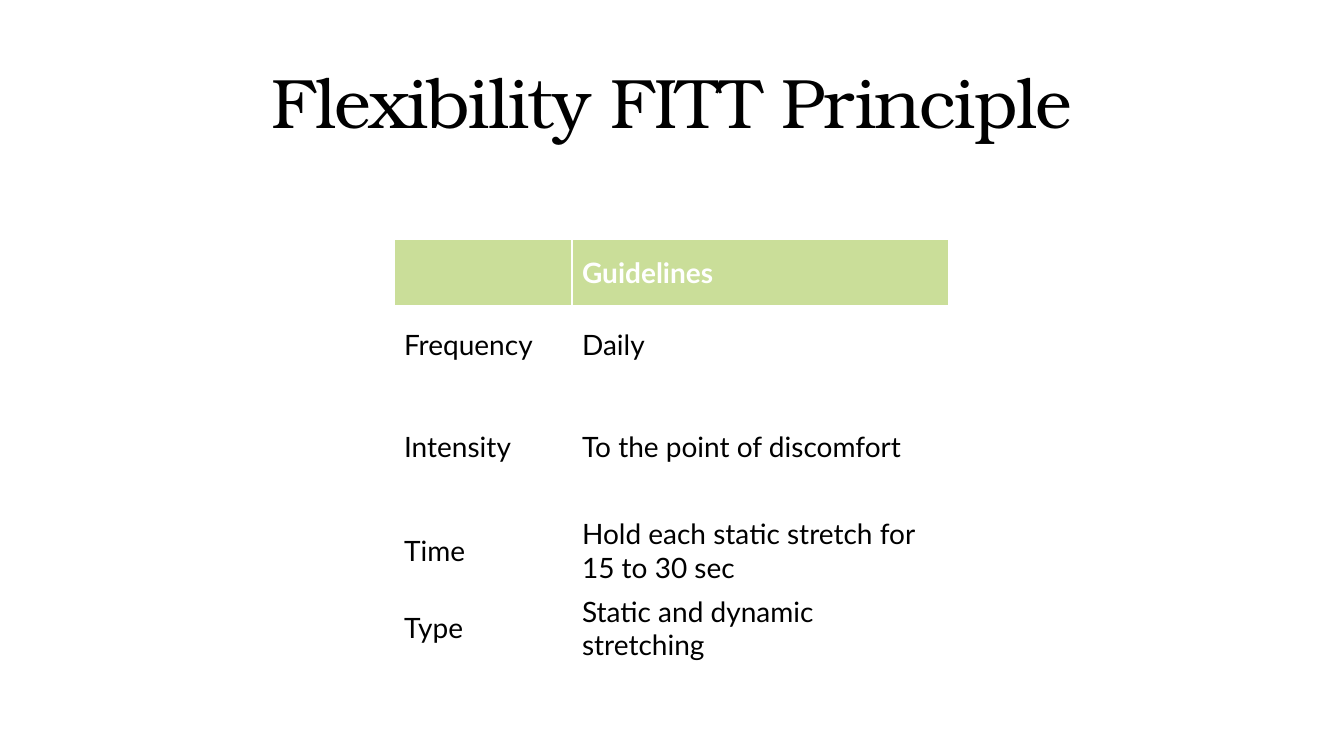
from lxml import etree
from pptx import Presentation
from pptx.dml.color import RGBColor
from pptx.enum.text import MSO_ANCHOR, PP_ALIGN
from pptx.oxml.ns import qn
from pptx.util import Pt

EMU_PER_PX = 914400 / 100.8
MIDDLE = MSO_ANCHOR.MIDDLE
CENTER = PP_ALIGN.CENTER

BLACK = RGBColor(0x00, 0x00, 0x00)
WHITE = RGBColor(0xFF, 0xFF, 0xFF)
LIGHT_GREEN = RGBColor(0xCA, 0xDE, 0x99)

TITLE_FONT = "TeX Gyre Bonum"
BODY_FONT = "Lato"

GUIDELINES = [
    ("", "Guidelines"),
    ("Frequency", "Daily"),
    ("Intensity", "To the point of discomfort"),
    ("Time", "Hold each static stretch for 15 to 30 sec"),
    ("Type", "Static and dynamic stretching"),
]
COLUMN_WIDTHS = [178, 377]
ROW_HEIGHTS = [68, 75, 130, 75, 75]


def px(length):
    return round(length * EMU_PER_PX)


def write(frame, text, font=BODY_FONT, size=20, color=BLACK, bold=False,
          align=None, line_spacing=None, tracking=None):
    """Fill a text frame with one formatted paragraph; tracking is in points."""
    paragraph = frame.paragraphs[0]
    paragraph.alignment = align
    paragraph.line_spacing = line_spacing
    paragraph.font.size = Pt(size)
    if not text:
        return
    run = paragraph.add_run()
    run.text = text
    run.font.name = font
    run.font.size = Pt(size)
    run.font.bold = bold
    run.font.color.rgb = color
    if tracking is not None:
        run.font._element.set("spc", str(round(tracking * 100)))


def set_borders(cell, color, **widths):
    """Give cell sides (L, R, T, B) solid lines with widths in points."""
    properties = cell._tc.get_or_add_tcPr()
    for position, (side, width) in enumerate(widths.items()):
        line = etree.Element(qn(f"a:ln{side}"), w=str(Pt(width)))
        fill = etree.SubElement(line, qn("a:solidFill"))
        etree.SubElement(fill, qn("a:srgbClr"), val=str(color))
        properties.insert(position, line)


class FitnessSlide:
    def __init__(self, presentation):
        self.slide = presentation.slides.add_slide(presentation.slide_layouts[6])

    def title(self, text, left, top, width, height):
        box = self.slide.shapes.add_textbox(px(left), px(top), px(width), px(height))
        frame = box.text_frame
        frame.word_wrap = True
        frame.vertical_anchor = MIDDLE
        write(frame, text, font=TITLE_FONT, size=50, align=CENTER,
              line_spacing=0.9, tracking=-1)

    def table(self, rows, left, top, column_widths, row_heights):
        table = self.slide.shapes.add_table(
            len(rows), len(column_widths), px(left), px(top),
            px(sum(column_widths)), px(sum(row_heights))).table
        table.horz_banding = False
        for column, width in zip(table.columns, column_widths):
            column.width = px(width)
        for row, height in zip(table.rows, row_heights):
            row.height = px(height)
        for r, labels in enumerate(rows):
            header = r == 0
            for c, label in enumerate(labels):
                cell = table.cell(r, c)
                cell.vertical_anchor = MIDDLE
                cell.fill.solid()
                cell.fill.fore_color.rgb = LIGHT_GREEN if header else WHITE
                set_borders(cell, WHITE, L=1, R=1,
                            T=3 if r == 1 else 1, B=3 if header else 1)
                write(cell.text_frame, label, bold=header,
                      color=WHITE if header else BLACK)


def main():
    presentation = Presentation()
    presentation.slide_width = px(1344)
    presentation.slide_height = px(756)
    slide = FitnessSlide(presentation)
    slide.title("Flexibility FITT Principle", 0, 56, 1344, 99)
    slide.table(GUIDELINES, 394, 239, COLUMN_WIDTHS, ROW_HEIGHTS)
    presentation.save("out.pptx")


if __name__ == "__main__":
    main()
